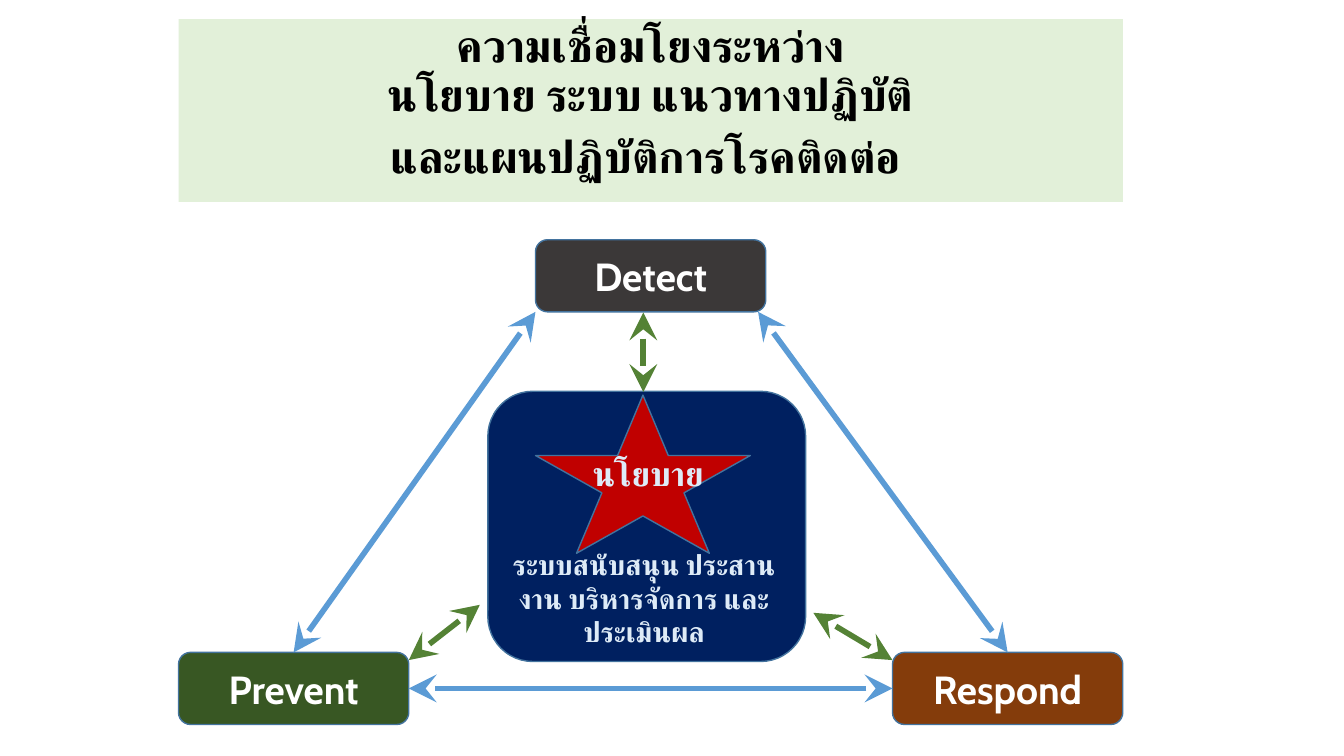
import pptx
import pptx.util
import pptx.dml.color
import pptx.enum.shapes
import pptx.enum.text
import pptx.oxml
import pptx.oxml.ns

Pt = pptx.util.Pt
RGBColor = pptx.dml.color.RGBColor
SHAPE = pptx.enum.shapes.MSO_SHAPE
ANCHOR = pptx.enum.text.MSO_ANCHOR
CENTER = pptx.enum.text.PP_ALIGN.CENTER

BLACK = RGBColor(0x00, 0x00, 0x00)
WHITE = RGBColor(0xFF, 0xFF, 0xFF)
PALE_GREEN = RGBColor(0xE2, 0xF0, 0xD9)
PALE_BLUE = RGBColor(0xDE, 0xEB, 0xF7)
DARK_GREEN = RGBColor(0x38, 0x57, 0x23)
BROWN = RGBColor(0x84, 0x3C, 0x0B)
CHARCOAL = RGBColor(0x3B, 0x38, 0x38)
NAVY = RGBColor(0x00, 0x20, 0x60)
RED = RGBColor(0xC0, 0x00, 0x00)
OUTLINE = RGBColor(0x43, 0x73, 0x9E)
BLUE = RGBColor(0x5B, 0x9B, 0xD5)
GREEN = RGBColor(0x54, 0x82, 0x35)
FONT = "Cabin"


def add_block(kind, left, top, width, height, fill, outline=OUTLINE):
    shape = page.shapes.add_shape(kind, Pt(left), Pt(top), Pt(width), Pt(height))
    shape.shadow.inherit = False
    shape.fill.solid()
    shape.fill.fore_color.rgb = fill
    if outline is None:
        shape.line.fill.background()
    else:
        shape.line.color.rgb = outline
        shape.line.width = Pt(1)
    return shape


def write(para, lines, size, color):
    """Add centred bold lines, with the font set for Latin and Thai alike."""
    para.alignment = CENTER
    for number, line in enumerate(lines):
        if number:
            para.add_line_break()
        span = para.add_run()
        span.text = line
        span.font.size = Pt(size)
        span.font.bold = True
        span.font.color.rgb = color
        span.font.name = FONT
        thai = pptx.oxml.parse_xml(f'<a:cs {pptx.oxml.ns.nsdecls("a")} typeface="{FONT}"/>')
        span._r.get_or_add_rPr().append(thai)


deck = pptx.Presentation()
deck.slide_width, deck.slide_height = Pt(960), Pt(540)
page = deck.slides.add_slide(deck.slide_layouts[6])

# Title band
LEFT, WIDTH = 127.5, 674.5
title = add_block(SHAPE.RECTANGLE, LEFT, 13.75, WIDTH, 130.5, PALE_GREEN, None)
title.text_frame.vertical_anchor = ANCHOR.TOP
first = title.text_frame.paragraphs[0]
second = title.text_frame.add_paragraph()
second.space_before = Pt(10)
for para, lines in (
    (first, ["ความเชื่อมโยงระหว่าง", "นโยบาย ระบบ แนวทางปฏิบัติ"]),
    (second, ["และแผนปฏิบัติการโรคติดต่อ "]),
):
    para.line_spacing = 0.9
    write(para, lines, 32, BLACK)

# Corner cards of the triangle
CARD_WIDTH, CARD_HEIGHT = 164.5, 51.5
RIGHT_CARD = LEFT + WIDTH - CARD_WIDTH
TOP_CARD = LEFT + (WIDTH - CARD_WIDTH) / 2
DETECT_TOP, BASE_TOP = 171.25, 466
for name, left, top, fill in (
    ("Prevent", LEFT, BASE_TOP, DARK_GREEN),
    ("Respond", RIGHT_CARD, BASE_TOP, BROWN),
    ("Detect", TOP_CARD, DETECT_TOP, CHARCOAL),
):
    card = add_block(SHAPE.ROUNDED_RECTANGLE, left, top, CARD_WIDTH, CARD_HEIGHT, fill)
    card.text_frame.vertical_anchor = ANCHOR.MIDDLE
    write(card.text_frame.paragraphs[0], [name], 28, WHITE)

# Central policy block
add_block(SHAPE.ROUNDED_RECTANGLE, 348.5, 279.5, 227, 193, NAVY)
add_block(SHAPE.STAR_5_POINT, 382.5, 282.25, 153.5, 113, RED)
for text, left, top, width, height, size in (
    ("ระบบสนับสนุน ประสานงาน บริหารจัดการ และประเมินผล", 346.5, 387.5, 227, 80, 20),
    ("นโยบาย", 409, 319.75, 108, 36, 24),
):
    box = page.shapes.add_textbox(Pt(left), Pt(top), Pt(width), Pt(height))
    box.text_frame.word_wrap = True
    write(box.text_frame.paragraphs[0], [text], size, PALE_BLUE)

# Two-way arrows
DETECT_BOTTOM = DETECT_TOP + CARD_HEIGHT
BASE_MIDDLE = BASE_TOP + CARD_HEIGHT / 2
PREVENT_EDGE = LEFT + CARD_WIDTH
for start_x, start_y, end_x, end_y, color in (
    (TOP_CARD, DETECT_BOTTOM, LEFT + CARD_WIDTH / 2, BASE_TOP, BLUE),
    (RIGHT_CARD, BASE_MIDDLE, PREVENT_EDGE, BASE_MIDDLE, BLUE),
    (541.5, DETECT_BOTTOM, RIGHT_CARD + CARD_WIDTH / 2, BASE_TOP, BLUE),
    (342.75, 432, PREVENT_EDGE, 471.5, GREEN),
    (RIGHT_CARD, 471.5, 581, 437.75, GREEN),
    (459.5, 223.25, 459.5, 280, GREEN),
):
    arrow = page.shapes.add_connector(
        pptx.enum.shapes.MSO_CONNECTOR.STRAIGHT,
        Pt(start_x), Pt(start_y), Pt(end_x), Pt(end_y))
    arrow.line.color.rgb = color
    arrow.line.width = Pt(4)
    outline = arrow.line._get_or_add_ln()
    for end in ("headEnd", "tailEnd"):
        outline.append(pptx.oxml.parse_xml(
            f'<a:{end} {pptx.oxml.ns.nsdecls("a")} type="stealth" w="lg" len="lg"/>'))
    arrow._element.spPr.append(
        pptx.oxml.parse_xml(f'<a:effectLst {pptx.oxml.ns.nsdecls("a")}/>'))

deck.save("out.pptx")
